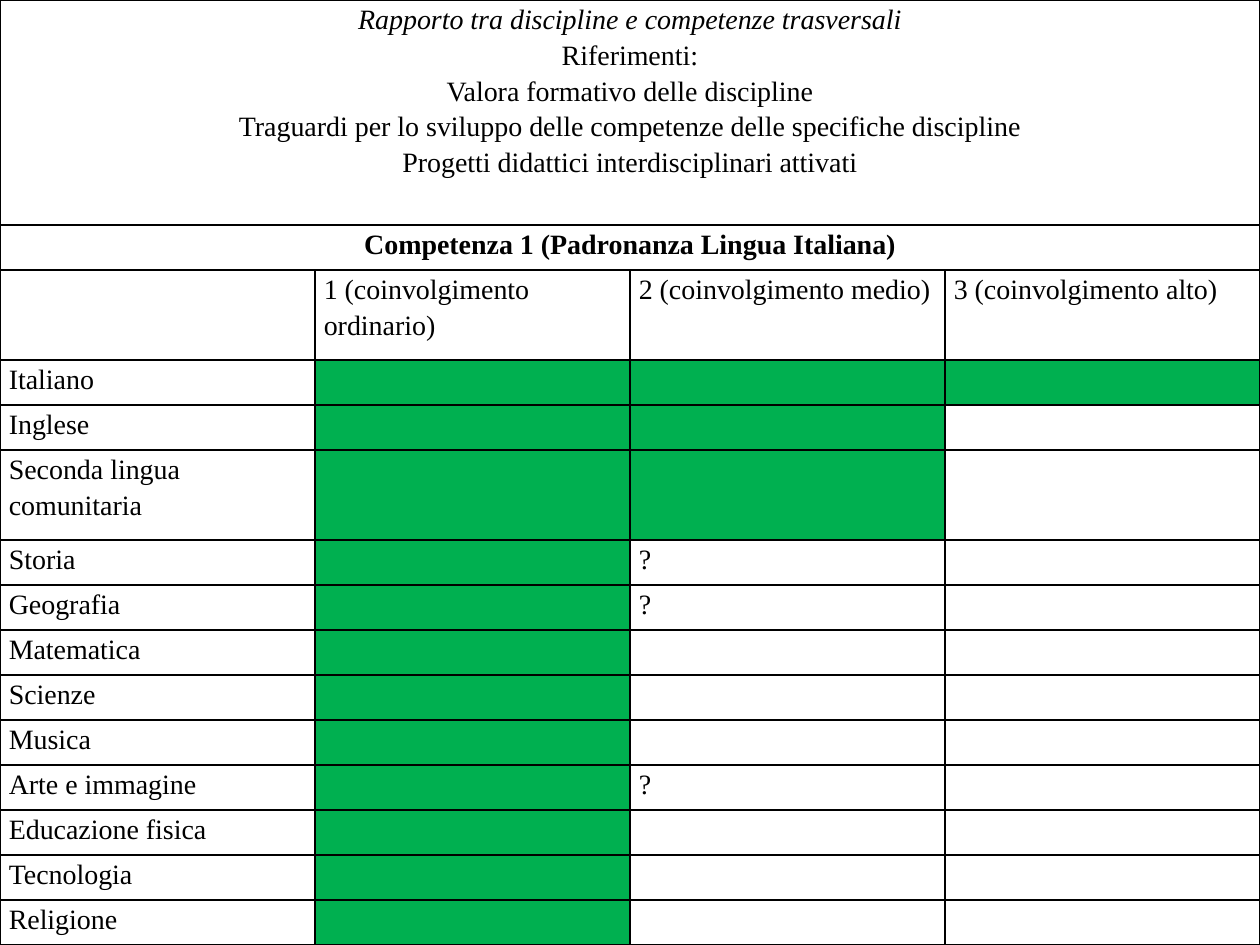
from dataclasses import dataclass

from lxml.etree import SubElement
from pptx import Presentation
from pptx.dml.color import RGBColor
from pptx.enum.text import PP_ALIGN as Align
from pptx.oxml.ns import qn
from pptx.table import Table, _Cell as Cell
from pptx.util import Inches, Pt

SLIDE_WIDTH, SLIDE_HEIGHT = 10, 7.5
COLUMN_COUNT = 4
BLACK, WHITE, GREEN = "000000", "FFFFFF", "00B050"


@dataclass
class Subject:
    name: str
    level: int = 1  # number of green cells
    doubtful: bool = False  # question mark in the next cell
    lines: int = 1


HEADING = [
    "Rapporto tra discipline e competenze trasversali",
    "Riferimenti:",
    "Valora formativo delle discipline",
    "Traguardi per lo sviluppo delle competenze delle specifiche discipline",
    "Progetti didattici interdisciplinari attivati",
]
COMPETENCE = "Competenza 1 (Padronanza Lingua Italiana)"
LEVELS = ["1 (coinvolgimento ordinario)", "2 (coinvolgimento medio)",
          "3 (coinvolgimento alto)"]
SUBJECTS = [
    Subject("Italiano", level=3),
    Subject("Inglese", level=2),
    Subject("Seconda lingua comunitaria", level=2, lines=2),
    Subject("Storia", doubtful=True),
    Subject("Geografia", doubtful=True),
    Subject("Matematica"),
    Subject("Scienze"),
    Subject("Musica"),
    Subject("Arte e immagine", doubtful=True),
    Subject("Educazione fisica"),
    Subject("Tecnologia"),
    Subject("Religione"),
]
# Row heights, counted in text lines: heading, competence, levels, subjects
ROW_LINES = [5, 1, 2] + [subject.lines for subject in SUBJECTS]


def color(value: str) -> RGBColor:
    return RGBColor.from_string(value)


def write(cell: Cell, *lines: str, align: Align = Align.LEFT,
          bold: bool = False, italic_first: bool = False) -> None:
    """Write each line as a paragraph of the cell."""
    frame = cell.text_frame
    for index, line in enumerate(lines):
        paragraph = frame.add_paragraph() if index else frame.paragraphs[0]
        paragraph.alignment = align
        paragraph.line_spacing = 1.15
        run = paragraph.add_run()
        run.text = line
        font = run.font
        font.name, font.size, font.bold = "Times New Roman", Pt(16), bold
        font.italic = italic_first and index == 0
        font.color.rgb = color(BLACK)


def paint(cell: Cell, value: str) -> None:
    cell.fill.solid()
    cell.fill.fore_color.rgb = color(value)


def add_borders(cell: Cell) -> None:
    properties = cell._tc.get_or_add_tcPr()
    for side in ("a:lnL", "a:lnR", "a:lnT", "a:lnB"):
        line = SubElement(properties, qn(side), w=str(Pt(1)))
        fill = SubElement(line, qn("a:solidFill"))
        SubElement(fill, qn("a:srgbClr"), val=BLACK)


def add_grid(slide) -> Table:
    """Add a white bordered table that covers the slide."""
    table = slide.shapes.add_table(
        len(ROW_LINES), COLUMN_COUNT, 0, 0,
        Inches(SLIDE_WIDTH), Inches(SLIDE_HEIGHT)).table
    table.first_row = table.horz_banding = False
    line_height = SLIDE_HEIGHT / sum(ROW_LINES)
    for row, lines in zip(table.rows, ROW_LINES):
        row.height = Inches(line_height * lines)
    for cell in table.iter_cells():
        cell.margin_left = cell.margin_right = Inches(0.07)
        cell.margin_top = cell.margin_bottom = 0
        add_borders(cell)
        paint(cell, WHITE)
    return table


def fill_subject(table: Table, row: int, subject: Subject) -> None:
    write(table.cell(row, 0), subject.name)
    for column in range(1, subject.level + 1):
        paint(table.cell(row, column), GREEN)
    if subject.doubtful:
        write(table.cell(row, subject.level + 1), "?")


def main() -> None:
    presentation = Presentation()
    presentation.slide_width = Inches(SLIDE_WIDTH)
    presentation.slide_height = Inches(SLIDE_HEIGHT)
    slide = presentation.slides.add_slide(presentation.slide_layouts[6])
    table = add_grid(slide)

    # Heading rows across the whole table
    for row in (0, 1):
        table.cell(row, 0).merge(table.cell(row, COLUMN_COUNT - 1))
    write(table.cell(0, 0), *HEADING, align=Align.CENTER, italic_first=True)
    write(table.cell(1, 0), COMPETENCE, align=Align.CENTER, bold=True)

    # Involvement levels
    for column, level in enumerate(LEVELS, start=1):
        write(table.cell(2, column), level)

    # Subjects
    for row, subject in enumerate(SUBJECTS, start=3):
        fill_subject(table, row, subject)

    presentation.save("out.pptx")


if __name__ == "__main__":
    main()
